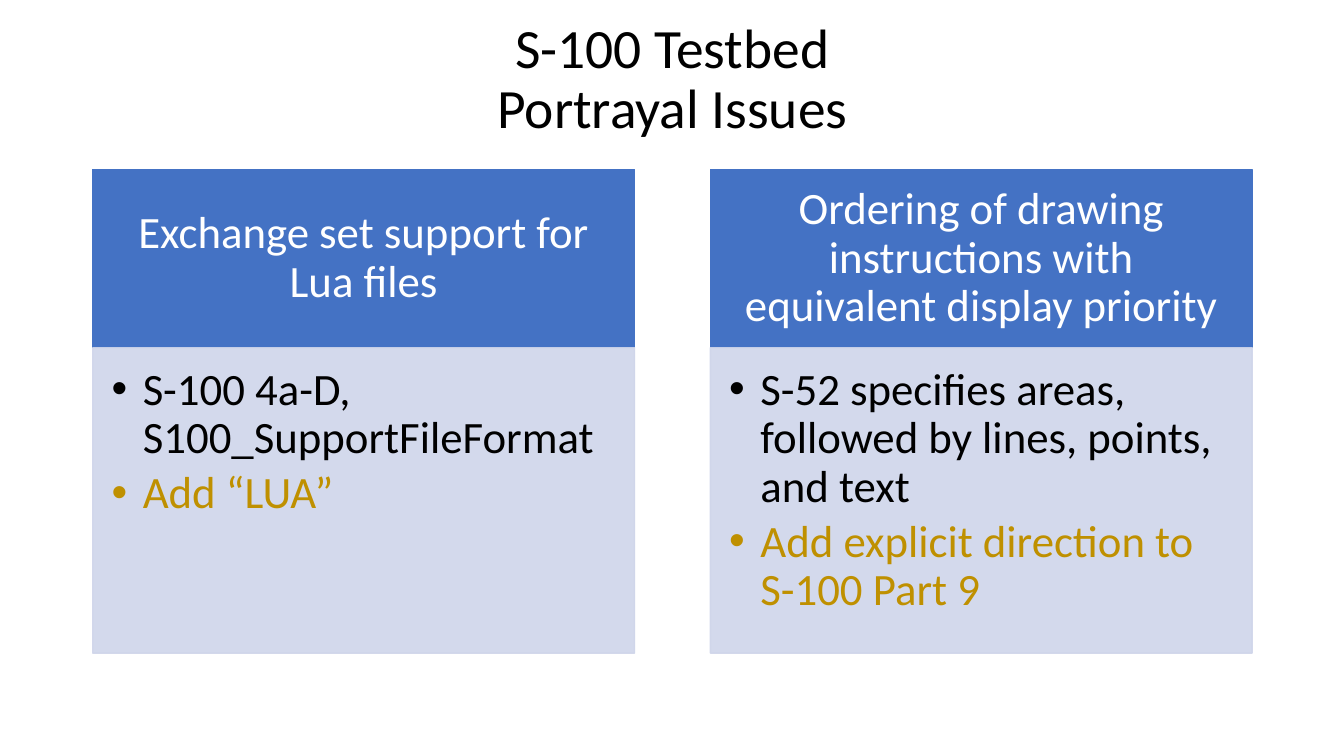
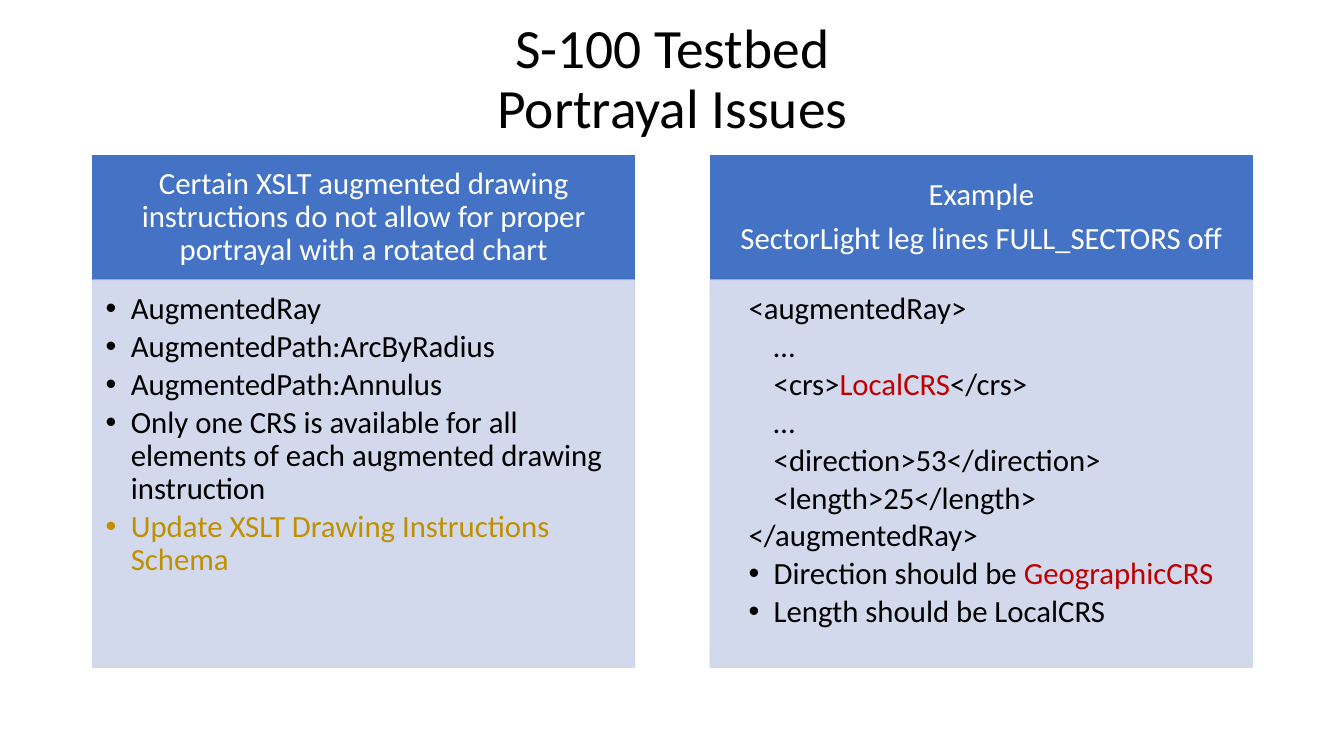
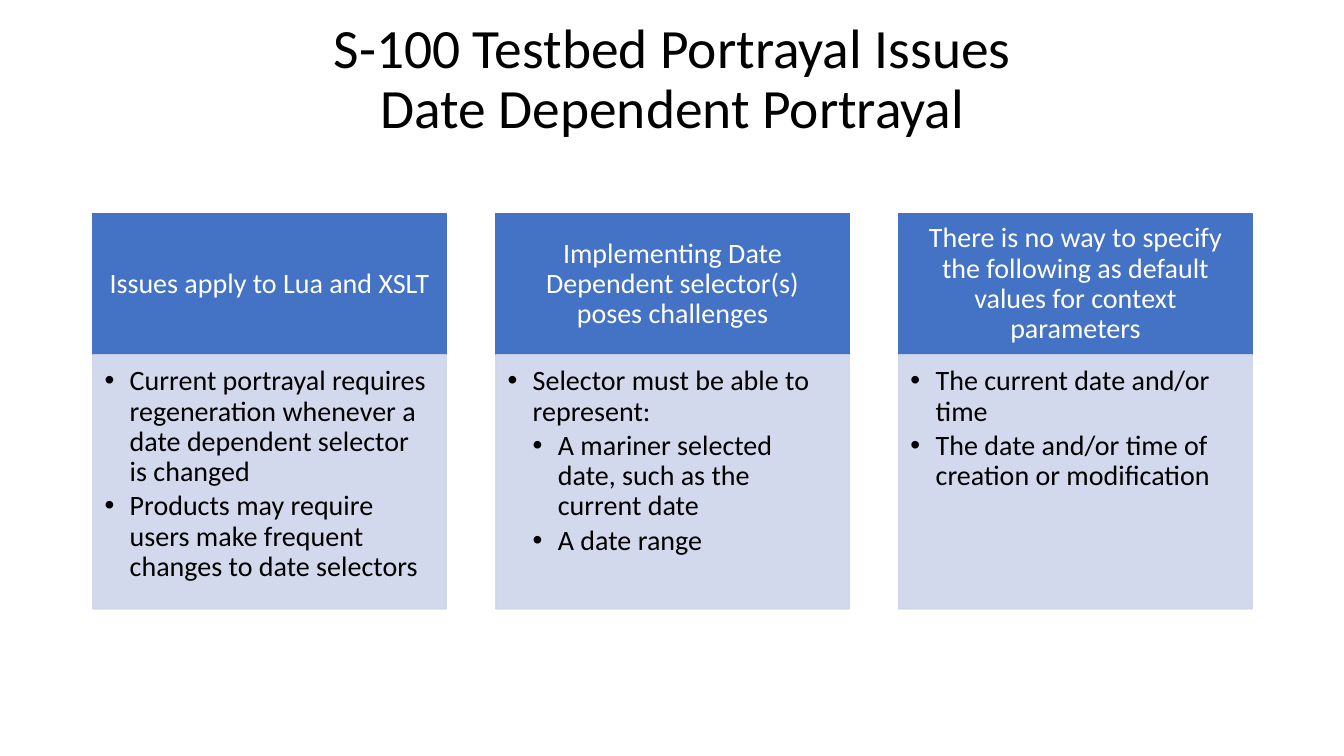
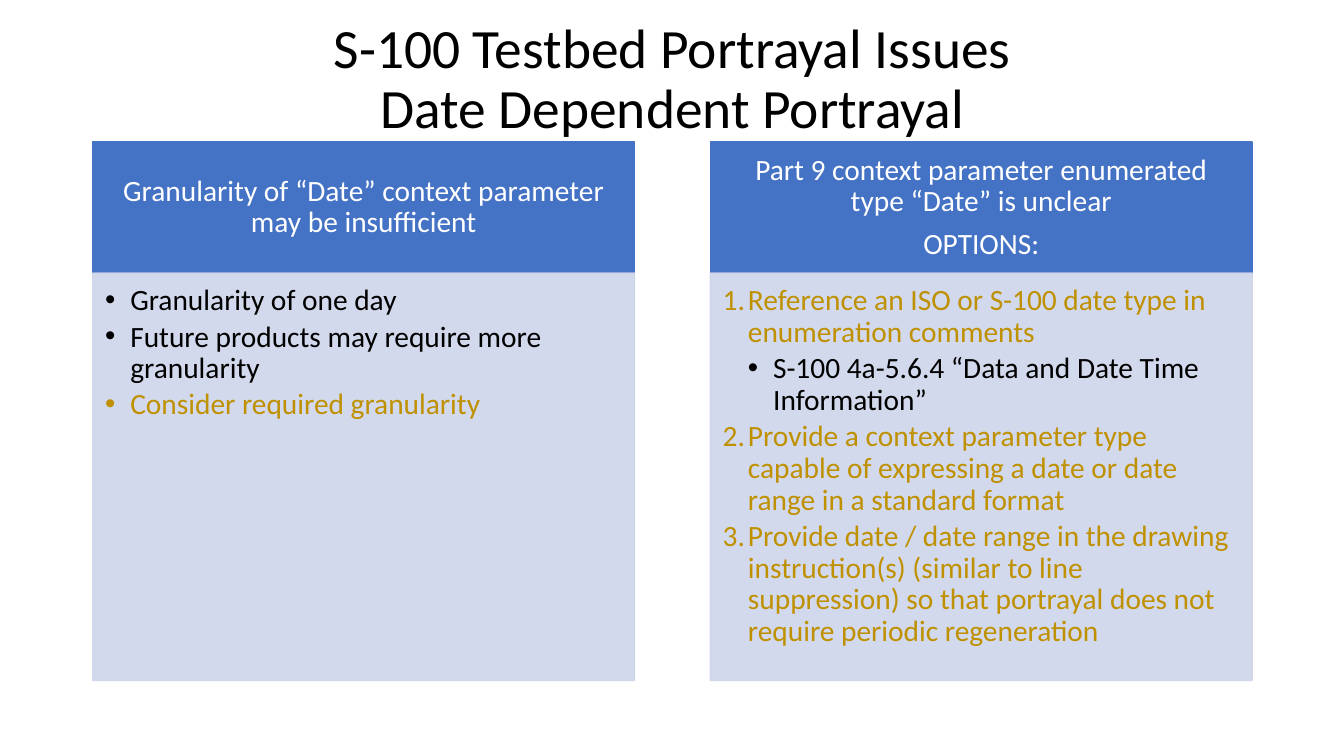
from dataclasses import dataclass

from lxml import etree
from pptx import Presentation
from pptx import util as u
from pptx.dml import color
from pptx.enum import shapes, text
from pptx.oxml import ns

FONT = "Calibri"
BLACK, WHITE, GOLD, RED = "000000", "FFFFFF", "BF9000", "C00000"
HEAD_FILL, BODY_FILL = "4472C4", "CFD5EA"
LEFT, WIDTH, GAP_RATIO = 0.92, 11.5, 0.14
LINE_SPACING, HEAD_AFTER, BODY_AFTER = 0.9, 0.35, 0.15

TESTBED_TITLE = ("S-100 Testbed", "Portrayal Issues")
DATE_TITLE = ("S-100 Testbed Portrayal Issues", "Date Dependent Portrayal")


@dataclass
class Item:
    """A body paragraph: coloured runs, list level and marker."""
    runs: list
    level: int = 1
    marker: str = "bullet"


@dataclass
class Panel:
    """A column: heading paragraphs above body items."""
    heading: list
    items: list


@dataclass
class Layout:
    """The vertical measures and text size of the columns on a slide."""
    top: float
    head_height: float
    body_height: float
    size: int
    hanging: float = 0.25


def item(words, tint=BLACK, level=1, marker="bullet"):
    """Return an item that holds a single run."""
    return Item([(words, tint)], level, marker)


def code(words, level):
    """Return an unmarked line of code."""
    return item(words, level=level, marker="none")


def rgb(value):
    """Turn a hex string into a colour."""
    return color.RGBColor.from_string(value)


def add_run(paragraph, words, size, tint):
    """Add one formatted run."""
    run = paragraph.add_run()
    run.text = words
    run.font.name = FONT
    run.font.size = u.Pt(size)
    run.font.color.rgb = rgb(tint)


def set_frame(frame, insets, anchor):
    """Set wrapping, anchor and left, top, right and bottom insets."""
    frame.word_wrap = True
    frame.vertical_anchor = anchor
    frame.margin_left, frame.margin_top, frame.margin_right, frame.margin_bottom = map(u.Inches, insets)


def next_paragraph(frame, index, after=0):
    """Return the paragraph at this index with line and paragraph spacing."""
    paragraph = frame.add_paragraph() if index else frame.paragraphs[0]
    paragraph.line_spacing = LINE_SPACING
    paragraph.space_after = u.Pt(after)
    return paragraph


def set_marker(paragraph, entry, hanging):
    """Set the level, indent and bullet or number of a paragraph."""
    paragraph.level = entry.level
    properties = paragraph._p.get_or_add_pPr()
    marked = entry.marker != "none"
    properties.set("marL", str(u.Inches(hanging * entry.level)))
    properties.set("indent", str(u.Inches(-hanging if marked else 0)))
    if entry.marker == "number":
        etree.SubElement(properties, ns.qn("a:buAutoNum"), type="arabicPeriod")
    elif marked:
        etree.SubElement(properties, ns.qn("a:buFont"), typeface="Arial")
        etree.SubElement(properties, ns.qn("a:buChar"), char="•")
    else:
        etree.SubElement(properties, ns.qn("a:buNone"))


def add_box(slide, box, fill, opacity=100):
    """Add a rectangle whose fill and line share a colour and an opacity."""
    shape = slide.shapes.add_shape(shapes.MSO_SHAPE.RECTANGLE, *map(u.Inches, box))
    shape.shadow.inherit = False
    shape.fill.solid()
    shape.fill.fore_color.rgb = rgb(fill)
    shape.line.color.rgb = rgb(fill)
    shape.line.width = u.Pt(1)
    if opacity < 100:
        for tint in shape._element.spPr.iter(ns.qn("a:srgbClr")):
            etree.SubElement(tint, ns.qn("a:alpha"), val=str(opacity * 1000))
    return shape


def add_title(slide, lines):
    """Add the centred title, one line break between its lines."""
    frame = slide.shapes.add_textbox(*map(u.Inches, (LEFT, 0.4, WIDTH, 0.79))).text_frame
    set_frame(frame, (0.1, 0.05, 0.1, 0.05), text.MSO_ANCHOR.MIDDLE)
    paragraph = next_paragraph(frame, 0)
    paragraph.alignment = text.PP_ALIGN.CENTER
    for index, line in enumerate(lines):
        if index:
            paragraph.add_line_break()
        add_run(paragraph, line, 39.6, BLACK)


def add_heading(slide, box, lines, size):
    """Add the blue heading of a column."""
    frame = add_box(slide, box, HEAD_FILL).text_frame
    side, edge = 0.56 * size / 72, 0.32 * size / 72
    set_frame(frame, (side, edge, side, edge), text.MSO_ANCHOR.MIDDLE)
    for index, line in enumerate(lines):
        paragraph = next_paragraph(frame, index, HEAD_AFTER * size)
        paragraph.alignment = text.PP_ALIGN.CENTER
        add_run(paragraph, line, size, WHITE)


def add_body(slide, box, items, size, hanging):
    """Add the pale list below a heading."""
    frame = add_box(slide, box, BODY_FILL, 90).text_frame
    insets = [ratio * size / 72 for ratio in (0.42, 0.42, 0.56, 0.63)]
    set_frame(frame, insets, text.MSO_ANCHOR.TOP)
    for index, entry in enumerate(items):
        paragraph = next_paragraph(frame, index, BODY_AFTER * size)
        paragraph.alignment = text.PP_ALIGN.LEFT
        set_marker(paragraph, entry, hanging)
        for words, tint in entry.runs:
            add_run(paragraph, words, size, tint)


def add_panel_slide(presentation, title, layout, panels):
    """Add a slide with a title and evenly spaced columns."""
    slide = presentation.slides.add_slide(presentation.slide_layouts[6])
    count = len(panels)
    width = WIDTH / (count + GAP_RATIO * (count - 1))
    body_top = layout.top + layout.head_height
    for index, panel in enumerate(panels):
        left = LEFT + index * width * (1 + GAP_RATIO)
        add_heading(slide, (left, layout.top, width, layout.head_height), panel.heading, layout.size)
        add_body(slide, (left, body_top, width, layout.body_height), panel.items, layout.size, layout.hanging)
    add_title(slide, title)


SLIDES = [
    (TESTBED_TITLE, Layout(1.68, 1.77, 3.03, 32, 0.31), [
        Panel(["Exchange set support for Lua files"], [
            item("S-100 4a-D, S100_SupportFileFormat"),
            item("Add “LUA”", GOLD),
        ]),
        Panel(["Ordering of drawing instructions with equivalent display priority"], [
            item("S-52 specifies areas, followed by lines, points, and text"),
            item("Add explicit direction to S-100 Part 9", GOLD),
        ]),
    ]),
    (TESTBED_TITLE, Layout(1.54, 1.24, 3.84, 22), [
        Panel(["Certain XSLT augmented drawing instructions do not allow for proper portrayal with a rotated chart"], [
            item("AugmentedRay"),
            item("AugmentedPath:ArcByRadius"),
            item("AugmentedPath:Annulus"),
            item("Only one CRS is available for all elements of each augmented drawing instruction"),
            item("Update XSLT Drawing Instructions Schema", GOLD),
        ]),
        Panel(["Example", "SectorLight leg lines FULL_SECTORS off"], [
            code("<augmentedRay>", 1),
            code("…", 2),
            Item([("<crs>", BLACK), ("LocalCRS", RED), ("</crs>", BLACK)], 2, "none"),
            code("…", 2),
            code("<direction>53</direction>", 2),
            code("<length>25</length>", 2),
            code("</augmentedRay>", 1),
            Item([("Direction should be ", BLACK), ("GeographicCRS", RED)], 2),
            item("Length should be LocalCRS", level=2),
        ]),
    ]),
    (DATE_TITLE, Layout(2.12, 1.4, 2.52, 20), [
        Panel(["Issues apply to Lua and XSLT"], [
            item("Current portrayal requires regeneration whenever a date dependent selector is changed"),
            item("Products may require users make frequent changes to date selectors"),
        ]),
        Panel(["Implementing Date Dependent selector(s) poses challenges"], [
            item("Selector must be able to represent:"),
            item("A mariner selected date, such as the current date", level=2),
            item("A date range", level=2),
        ]),
        Panel(["There is no way to specify the following as default values for context parameters"], [
            item("The current date and/or time"),
            item("The date and/or time of creation or modification"),
        ]),
    ]),
    (DATE_TITLE, Layout(1.41, 1.3, 4.04, 21), [
        Panel(["Granularity of “Date” context parameter may be insufficient"], [
            item("Granularity of one day"),
            item("Future products may require more granularity"),
            item("Consider required granularity", GOLD),
        ]),
        Panel(["Part 9 context parameter enumerated type “Date” is unclear", "OPTIONS:"], [
            item("Reference an ISO or S-100 date type in enumeration comments", GOLD, marker="number"),
            item("S-100 4a-5.6.4 “Data and Date Time Information”", level=2),
            item("Provide a context parameter type capable of expressing a date or date range in a standard format",
                 GOLD, marker="number"),
            item("Provide date / date range in the drawing instruction(s) (similar to line suppression) "
                 "so that portrayal does not require periodic regeneration", GOLD, marker="number"),
        ]),
    ]),
]


def main():
    """Build and save the presentation."""
    presentation = Presentation()
    presentation.slide_width = u.Inches(13.33)
    presentation.slide_height = u.Inches(7.5)
    for title, layout, panels in SLIDES:
        add_panel_slide(presentation, title, layout, panels)
    presentation.save("out.pptx")


if __name__ == "__main__":
    main()
